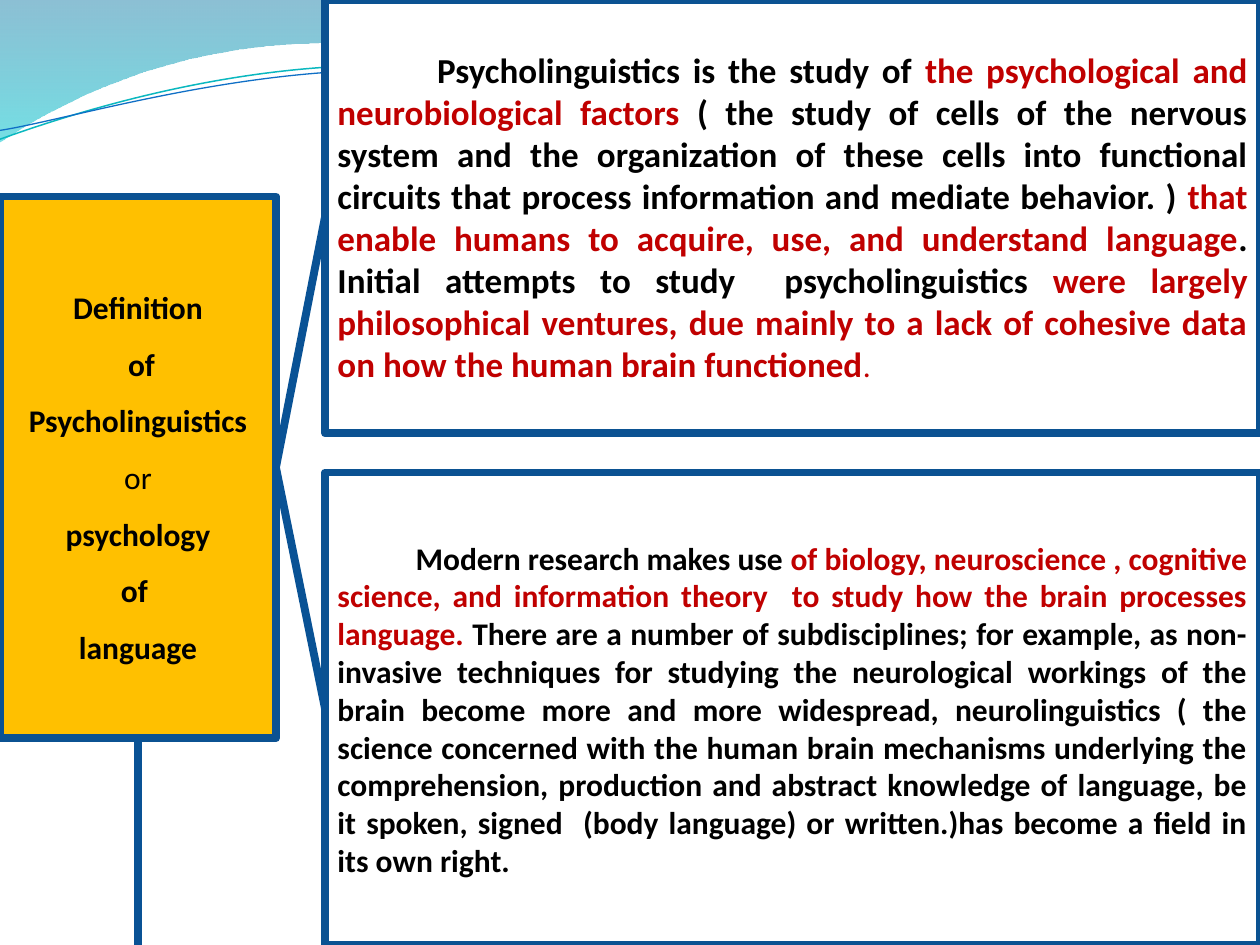
"""Build the slide that defines psycholinguistics in three linked panels."""
from dataclasses import dataclass

from lxml.etree import SubElement
from pptx import Presentation
from pptx.dml.color import RGBColor as Color
from pptx.enum.shapes import MSO_CONNECTOR as Connector, MSO_SHAPE as Shape
from pptx.enum.text import MSO_ANCHOR as Anchor, PP_ALIGN as Align
from pptx.oxml.ns import qn
from pptx.util import Inches, Pt


@dataclass(frozen=True)
class Theme:
    font: str = "Calibri"
    large: int = 20
    normal: int = 18
    border: float = 4.5
    ink: str = "000000"
    accent: str = "C00000"
    paper: str = "FFFFFF"
    gold: str = "FFC000"
    navy: str = "0B5292"
    link: str = "095295"
    teal_line: str = "0AB8BF"
    blue_line: str = "0F6FC6"
    wave: tuple = (("0074A1", 0, 45), ("00C6CF", 1, 55))
    crest: tuple = (("00A1A9", 0, 30), ("008BBF", 0.8, 45))


theme = Theme()
deck = Presentation()
deck.slide_width, deck.slide_height = Inches(10), Inches(7.5)
column = row = deck.slide_width / 10
slide = deck.slides.add_slide(deck.slide_layouts[6])
shapes = slide.shapes


def trace(start, *segments):
    """Draw an outline from line ends (x, y) and cubic segments of three points."""
    points = [(s[i] * column, s[i + 1] * row) for s in segments for i in range(0, len(s), 2)]
    builder = shapes.build_freeform(start[0] * column, start[1] * row)
    builder.add_line_segments(points, close=segments[-1] == start)
    outline = builder.convert_to_shape()
    outline.shadow.inherit = False
    corners = iter(list(outline._element.iter(qn("a:lnTo"))))
    for segment in segments:
        handles = [next(corners) for _ in range(len(segment) // 2)]
        if len(handles) == 3:
            handles[0].tag = qn("a:cubicBezTo")
            for handle in handles[1:]:
                handles[0].append(handle[0])
                handle.getparent().remove(handle)
    return outline


wave = trace((0, 0), (4.4, -0.01), (4.76, 0.17, 6.64, 0.63, 7.58, 0.63),
             (8.53, 0.63, 9.58, 0.26, 10, 0.09), (10.01, 0.36),
             (9.83, 0.44, 8.7, 0.76, 7.46, 0.75), (6.22, 0.75, 3.82, 0.28, 2.57, 0.34),
             (1.29, 0.36, 0.46, 0.83, -0.01, 1.13), (0, 0))
crest = trace((4.79, -0.01), (5.09, 0.11, 6.82, 0.62, 7.69, 0.65),
              (8.56, 0.69, 9.61, 0.32, 10, 0.21), (10, 0), (4.79, -0.01))
for band, stops in ((wave, theme.wave), (crest, theme.crest)):
    band.line.fill.background()
    band.fill.gradient()
    band.fill.gradient_angle = 270
    for stop, (shade, position, _) in zip(band.fill.gradient_stops, stops):
        stop.color.rgb, stop.position = Color.from_string(shade), position
    for tint, (_, _, opacity) in zip(band._element.spPr.iter(qn("a:srgbClr")), stops):
        SubElement(tint, qn("a:alpha"), val=str(opacity * 1000))

teal_ripple = trace((-0.02, 0.87), (0.47, 0.72, 1.58, 0.41, 2.78, 0.42),
                    (3.96, 0.42, 5.91, 0.93, 7.12, 0.9), (8.32, 0.87, 9.4, 0.36, 10, 0.22))
blue_ripple = trace((-0.02, 0.8), (0.46, 0.75, 1.64, 0.45, 2.83, 0.46),
                    (4.03, 0.46, 5.96, 0.88, 7.16, 0.85), (8.35, 0.83, 9.42, 0.42, 10.01, 0.3))
for ripple, shade, weight in ((teal_ripple, theme.teal_line, 0.85), (blue_ripple, theme.blue_line, 0.75)):
    ripple.rotation = 357.3
    ripple.fill.background()
    ripple.line.color.rgb = Color.from_string(shade)
    ripple.line.width = Pt(weight)

study = [[
    ("Psycholinguistics is the study of ", theme.ink, True, theme.large),
    ("the psychological and neurobiological factors ", theme.accent, True, theme.large),
    ("( the study of cells of the nervous system and the organization of these cells into functional "
     "circuits that process information and mediate behavior. ) ", theme.ink, True, theme.large),
    ("that enable humans to acquire, use, and understand language", theme.accent, True, theme.large),
    (". Initial attempts to study  psycholinguistics ", theme.ink, True, theme.large),
    ("were largely philosophical ventures, due mainly to a lack of cohesive data on how the human "
     "brain functioned", theme.accent, True, theme.large),
    (". ", theme.accent, False, theme.normal),
]]
research = [[
    ("Modern research makes use ", theme.ink, True, theme.normal),
    ("of biology, neuroscience , cognitive science, and information theory  to study how the brain "
     "processes language.", theme.accent, True, theme.normal),
    (" There are a number of subdisciplines; for example, as non-invasive techniques for studying the "
     "neurological workings of the brain become more and more widespread, neurolinguistics ( the science "
     "concerned with the human brain mechanisms underlying the comprehension, production and abstract "
     "knowledge of language, be it spoken, signed  (body language) or written.)has become a field in its "
     "own right.", theme.ink, True, theme.normal),
]]
definition = [
    [("Definition", theme.ink, True, theme.normal)],
    [(" of Psycholinguistics ", theme.ink, True, theme.normal), ("or", theme.ink, False, theme.normal)],
    [(" ", theme.ink, False, theme.normal), ("psychology ", theme.ink, True, theme.normal)],
    [("of ", theme.ink, True, theme.normal)],
    [("language", theme.ink, True, theme.normal)],
]

panels = []
for content, area, paper, align, spacing, indent in (
    (study, (2.58, 0, 7.42, 3.44), theme.paper, Align.JUSTIFY, 1, 0.79),
    (research, (2.58, 3.75, 7.42, 3.75), theme.paper, Align.JUSTIFY, 1, 0.62),
    (definition, (0, 1.56, 2.19, 4.3), theme.gold, Align.CENTER, 1.5, 0),
):
    panel = shapes.add_shape(Shape.RECTANGLE, *(round(length * column) for length in area))
    panel.shadow.inherit = False
    panel.fill.solid()
    panel.fill.fore_color.rgb = Color.from_string(paper)
    panel.line.color.rgb = Color.from_string(theme.navy)
    panel.line.width = Pt(theme.border)
    frame = panel.text_frame
    frame.word_wrap, frame.vertical_anchor = True, Anchor.MIDDLE
    for index, runs in enumerate(content):
        paragraph = frame.paragraphs[0] if index == 0 else frame.add_paragraph()
        paragraph.alignment, paragraph.line_spacing = align, spacing
        paragraph.font.name = theme.font
        paragraph._p.get_or_add_pPr().set("indent", str(round(indent * column)))
        for words, tone, bold, size in runs:
            run = paragraph.add_run()
            run.text, run.font.bold, run.font.size = words, bold, Pt(size)
            run.font.color.rgb = Color.from_string(tone)
    panels.append(panel)

study_panel, research_panel, concept = panels
stem_x = concept.left + concept.width // 2
for source_side, target in ((3, study_panel), (3, research_panel), (2, None)):
    link = shapes.add_connector(Connector.STRAIGHT, stem_x, deck.slide_height, stem_x, deck.slide_height)
    link.begin_connect(concept, source_side)
    if target is not None:
        link.end_connect(target, 1)
    link.line.color.rgb = Color.from_string(theme.link)
    link.line.width = Pt(theme.border)
    SubElement(link._element.spPr, qn("a:effectLst"))

deck.save("out.pptx")
